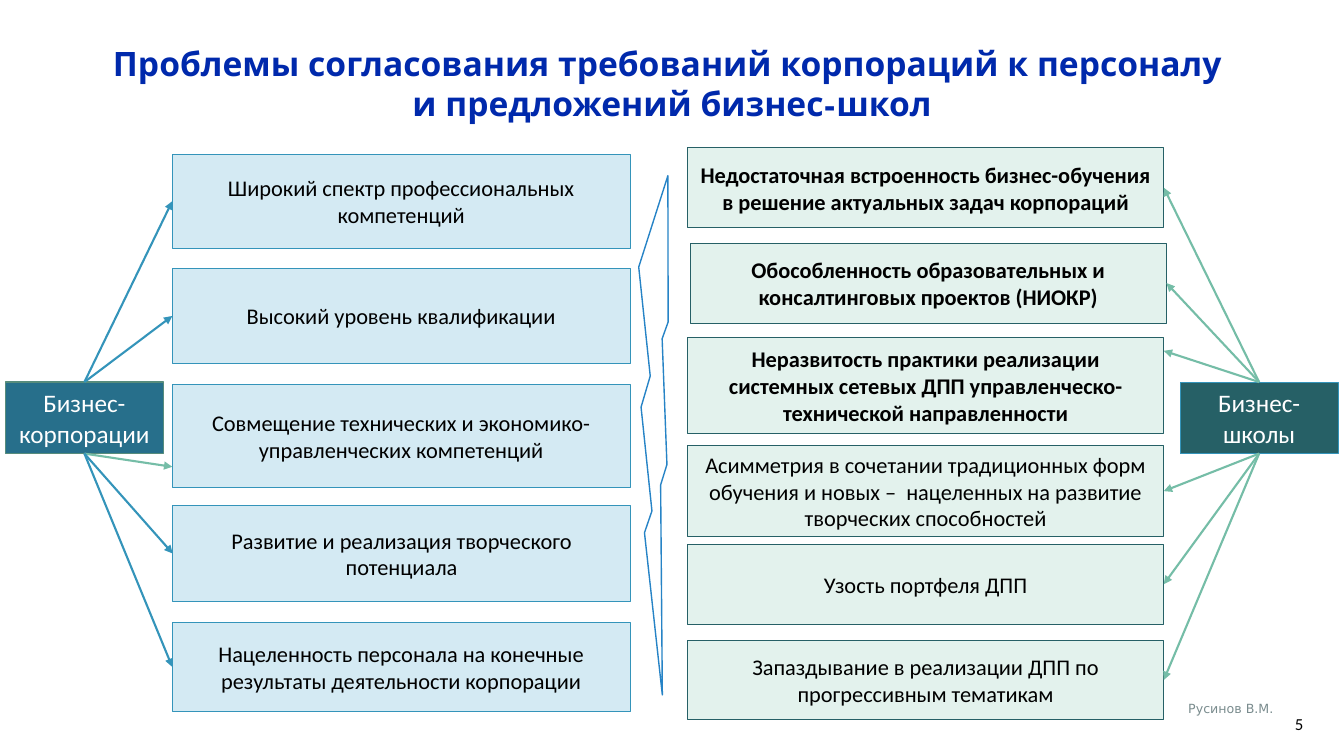
from lxml import etree
from pptx import Presentation
from pptx.dml.color import RGBColor
from pptx.enum.shapes import MSO_CONNECTOR, MSO_SHAPE
from pptx.enum.text import MSO_ANCHOR, PP_ALIGN
from pptx.oxml.ns import qn
from pptx.util import Pt

RECTANGLE, BOLT = MSO_SHAPE.RECTANGLE, MSO_SHAPE.LIGHTNING_BOLT
STRAIGHT = MSO_CONNECTOR.STRAIGHT
CENTER, RIGHT = PP_ALIGN.CENTER, PP_ALIGN.RIGHT
TOP, MIDDLE = MSO_ANCHOR.TOP, MSO_ANCHOR.MIDDLE

BLUE, GREEN, DARK_GREEN = "3494BA", "75BDA7", "266066"
HUB_TOP, HUB_WIDTH, HUB_HEIGHT = 272.9, 113, 51.1

# Each row: left, top, width, height, wording, bold, arrow shift, arrow colour
DEMANDS = [
    (123.1, 110.2, 327, 67, "Широкий спектр профессиональных компетенций", False, 0, BLUE),
    (123.1, 191.5, 327, 68.4, "Высокий уровень квалификации", False, 0, BLUE),
    (123.1, 274.7, 327, 73.7, "Совмещение технических и экономико-управленческих компетенций",
     False, 21.9, GREEN),
    (123.4, 361.2, 327, 68.4, "Развитие и реализация творческого потенциала", False, 0, BLUE),
    (123.1, 444.4, 327, 64, "Нацеленность персонала на конечные результаты деятельности корпорации",
     False, 0, BLUE),
]
OFFERS = [
    (491.1, 105.6, 340.2, 57,
     "Недостаточная встроенность бизнес-обучения в решение актуальных задач корпораций",
     True, 0, GREEN),
    (493, 173.7, 340.2, 57,
     "Обособленность образовательных и консалтинговых проектов (НИОКР)", True, 0, GREEN),
    (491.1, 241.2, 340.2, 68.4,
     "Неразвитость практики реализации системных сетевых ДПП "
     "управленческо-технической направленности", True, -24.8, GREEN),
    (491.1, 318.2, 340.2, 65.2,
     "Асимметрия в сочетании традиционных форм обучения и новых –  "
     "нацеленных на развитие творческих способностей", False, 0, GREEN),
    (491.1, 388.8, 340.2, 57, "Узость портфеля ДПП", False, 0, GREEN),
    (491.1, 457.2, 340.2, 57,
     "Запаздывание в реализации ДПП по прогрессивным тематикам", False, 0, GREEN),
]


def color(value):
    return RGBColor.from_string(value)


class SlideBuilder:
    font = "Calibri"

    def __init__(self, page):
        self.page = page

    def set_text(self, shape, text, size, ink, bold=False, align=CENTER, anchor=MIDDLE,
                 font=None):
        frame = shape.text_frame
        frame.word_wrap = True
        frame.vertical_anchor = anchor
        para = frame.paragraphs[0]
        para.text = text
        para.alignment = align
        para.font.name = font or self.font
        para.font.size = Pt(size)
        para.font.bold = bold
        para.font.color.rgb = color(ink)

    def label(self, left, top, width, height, text, size, ink, **style):
        box = self.page.shapes.add_textbox(Pt(left), Pt(top), Pt(width), Pt(height))
        self.set_text(box, text, size, ink, **style)

    def shape(self, kind, left, top, width, height, fill, line, weight):
        shape = self.page.shapes.add_shape(kind, Pt(left), Pt(top), Pt(width), Pt(height))
        shape.shadow.inherit = False
        shape.fill.solid()
        shape.fill.fore_color.rgb = color(fill)
        shape.line.color.rgb = color(line)
        shape.line.width = Pt(weight)
        return shape

    def arrow(self, start, end, ink):
        connector = self.page.shapes.add_connector(STRAIGHT, *map(Pt, start + end))
        connector.line.color.rgb = color(ink)
        connector.line.width = Pt(1.5)
        properties = connector._element.spPr
        etree.SubElement(properties.find(qn("a:ln")), qn("a:tailEnd"), type="triangle")
        etree.SubElement(properties, qn("a:effectLst"))

    def fan(self, hub_left, hub_text, hub_style, rows, box_style, edge):
        """Draw a hub with arrows to its rows; edge is 0 for left box sides, 1 for right."""
        hub = self.shape(RECTANGLE, hub_left, HUB_TOP, HUB_WIDTH, HUB_HEIGHT, *hub_style)
        self.set_text(hub, hub_text, 18, "FFFFFF")
        for left, top, width, height, text, bold, shift, ink in rows:
            box = self.shape(RECTANGLE, left, top, width, height, *box_style)
            self.set_text(box, text, 16, "000000", bold=bold)
            target = top + height / 2 + shift
            start = HUB_TOP if target < HUB_TOP else HUB_TOP + HUB_HEIGHT
            self.arrow((hub_left + HUB_WIDTH / 2, start), (left + edge * width, target), ink)


def main():
    deck = Presentation()
    deck.slide_width, deck.slide_height = Pt(960), Pt(540)
    builder = SlideBuilder(deck.slides.add_slide(deck.slide_layouts[6]))

    builder.label(0, 21.6, 960, 75.6,
                  "Проблемы согласования требований корпораций к персоналу \vи предложений бизнес-школ",
                  24, "0029AC", bold=True, font="League Spartan")
    builder.fan(3.8, "Бизнес-корпорации", ("276F8B", "578C7C", 1),
                DEMANDS, ("D4EAF3", BLUE, 0.5), 0)
    builder.fan(842.9, "Бизнес-школы", (DARK_GREEN, BLUE, 0.5),
                OFFERS, ("E3F2ED", DARK_GREEN, 0.5), 1)
    bolt = builder.shape(BOLT, 447.1, 125.3, 40.3, 370.1, "FFFFFF", "2683C6", 1)
    bolt.rotation = 4.4
    builder.label(714.2, 502.6, 223.9, 28.8, "5", 12, "000000", align=RIGHT)
    builder.label(763.2, 496.8, 153.4, 18, "Русинов В.М.", 9, "7A8C8E",
                  align=RIGHT, anchor=TOP, font="DejaVu Sans")
    deck.save("out.pptx")


if __name__ == "__main__":
    main()
